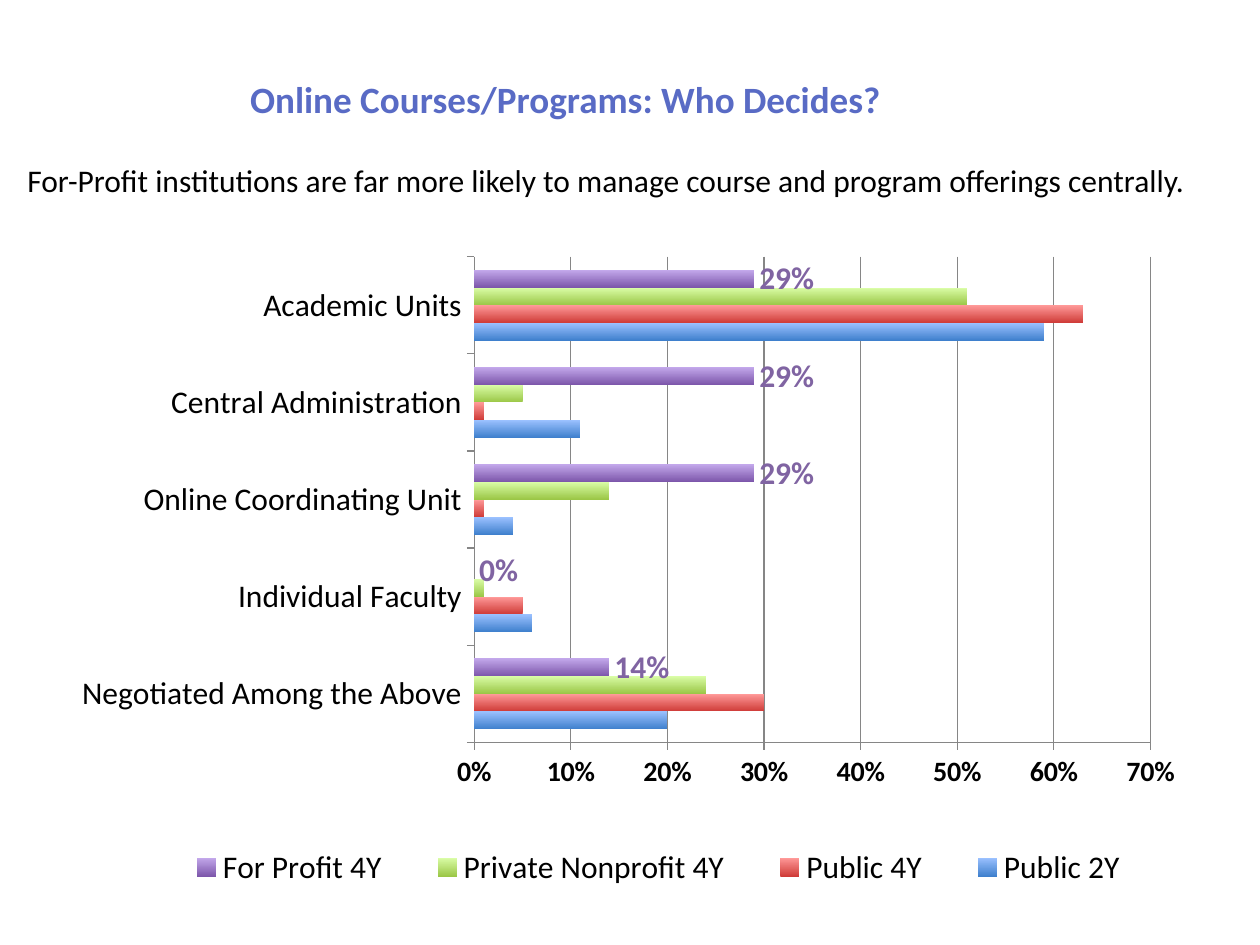
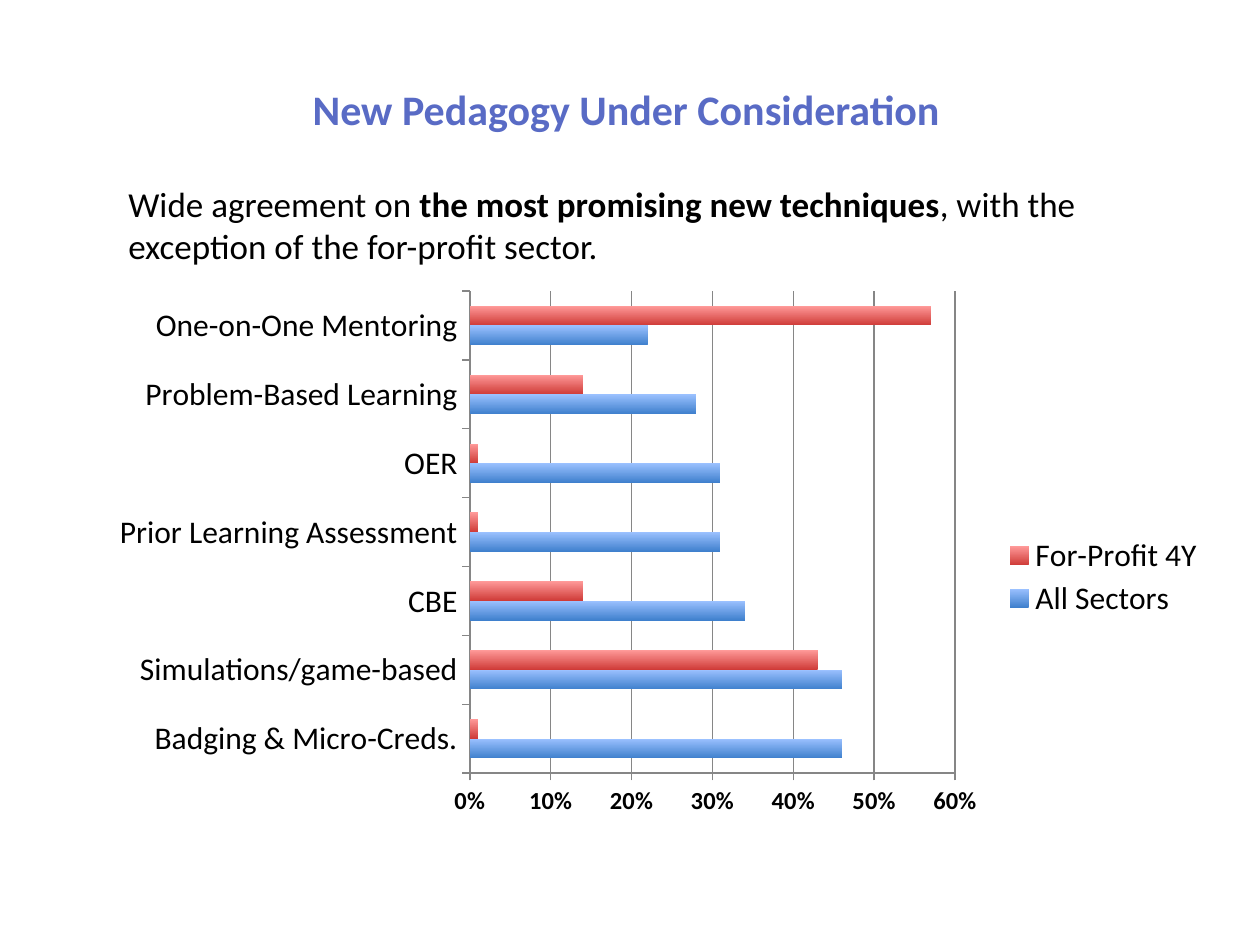
from lxml import etree
from pptx import Presentation
from pptx.chart.data import CategoryChartData
from pptx.dml.color import RGBColor
from pptx.enum.chart import XL_CHART_TYPE, XL_LABEL_POSITION, XL_LEGEND_POSITION, XL_TICK_MARK
from pptx.enum.text import MSO_ANCHOR, PP_ALIGN
from pptx.oxml.ns import qn
from pptx.util import Emu, Pt

BAR_CLUSTERED = XL_CHART_TYPE.BAR_CLUSTERED
LABEL_OUTSIDE = XL_LABEL_POSITION.OUTSIDE_END
LEGEND_RIGHT = XL_LEGEND_POSITION.RIGHT
TICK_OUTSIDE, TICK_NONE = XL_TICK_MARK.OUTSIDE, XL_TICK_MARK.NONE
MIDDLE, TOP = MSO_ANCHOR.MIDDLE, MSO_ANCHOR.TOP
CENTER, LEFT = PP_ALIGN.CENTER, PP_ALIGN.LEFT

SCALE = 914400 / 126
SLIDE_SIZE = (1260, 945)
FONT = "Calibri"
INSET = 13
COLORS = {"title": "596BC5", "text": "000000", "axis": "868686", "label": "8064A2"}
GRADIENTS = {
    "blue": ("3F80CD", "9BC1FF"),
    "red": ("CF3B38", "FF9A99"),
    "green": ("9BC747", "DAFDA7"),
    "purple": ("7D57AB", "C3A8EB"),
}

SLIDES = [
    {
        "title": {"text": "Online Courses/Programs: Who Decides?", "size": 21.2,
                  "box": (237, 58, 808, 82), "right_inset": 163},
        "message": {"runs": [("For-Profit institutions are far more likely to manage course "
                              "and program offerings centrally.", False)],
                    "size": 18, "box": (15, 155, 1208, 50)},
        "chart": {
            "box": (58, 223, 1166, 689),
            "plot": (0.357, 0.049, 0.58, 0.705),
            "legend": (0.08, 0.9, 0.87, 0.07),
            "maximum": 0.7,
            "axis_size": 16,
            "categories": ["Negotiated Among the Above", "Individual Faculty",
                           "Online Coordinating Unit", "Central Administration",
                           "Academic Units"],
            "series": [
                ("Public 2Y", "blue", (0.2, 0.06, 0.04, 0.11, 0.59)),
                ("Public 4Y", "red", (0.3, 0.05, 0.01, 0.01, 0.63)),
                ("Private Nonprofit 4Y", "green", (0.24, 0.01, 0.14, 0.05, 0.51)),
                ("For Profit 4Y", "purple", (0.14, 0, 0.29, 0.29, 0.29)),
            ],
            "labelled": "For Profit 4Y",
        },
    },
    {
        "title": {"text": "New Pedagogy Under Consideration", "size": 24,
                  "box": (202, 59, 849, 100), "right_inset": INSET},
        "message": {"runs": [("Wide agreement on ", False),
                             ("the most promising new techniques", True),
                             (", with the exception of the for-profit sector.", False)],
                    "size": 20, "box": (116, 176, 1023, 97)},
        "chart": {
            "box": (87, 275, 1123, 598),
            "plot": (0.341, 0.027, 0.432, 0.806),
            "legend": (0.81, 0.43, 0.19, 0.15),
            "maximum": 0.6,
            "axis_size": 14,
            "categories": ["Badging & Micro-Creds.", "Simulations/game-based", "CBE",
                           "Prior Learning Assessment", "OER", "Problem-Based Learning",
                           "One-on-One Mentoring"],
            "series": [
                ("All Sectors", "blue", (0.46, 0.46, 0.34, 0.31, 0.31, 0.28, 0.22)),
                ("For-Profit 4Y", "red", (0.01, 0.43, 0.14, 0.01, 0.01, 0.14, 0.57)),
            ],
            "labelled": None,
        },
    },
]


def px(length):
    return Emu(round(length * SCALE))


def color(name):
    return RGBColor.from_string(COLORS[name])


def style_font(font, size, color_name, bold):
    font.name = FONT
    font.size = Pt(size)
    font.bold = bold
    font.color.rgb = color(color_name)


def add_text(slide, box, runs, size, color_name, anchor, alignment, right_inset=INSET):
    text_frame = slide.shapes.add_textbox(*map(px, box)).text_frame
    text_frame.word_wrap = True
    text_frame.vertical_anchor = anchor
    text_frame.margin_right = px(right_inset)
    paragraph = text_frame.paragraphs[0]
    paragraph.alignment = alignment
    for text, bold in runs:
        run = paragraph.add_run()
        run.text = text
        style_font(run.font, size, color_name, bold)


def make_layout(bounds, inner=False):
    layout = etree.Element(qn("c:layout"))
    manual = etree.SubElement(layout, qn("c:manualLayout"))
    settings = [("layoutTarget", "inner")] if inner else []
    settings += [("xMode", "edge"), ("yMode", "edge")]
    settings += list(zip("xywh", map(str, bounds)))
    for tag, value in settings:
        etree.SubElement(manual, qn(f"c:{tag}")).set("val", value)
    return layout


def place_parts(chart, plot_bounds, legend_bounds):
    plot_area = chart._chartSpace.find(".//" + qn("c:plotArea"))
    legend = chart._chartSpace.find(".//" + qn("c:legend"))
    for part in (plot_area, legend):
        for layout in part.findall(qn("c:layout")):
            part.remove(layout)
    plot_area.insert(0, make_layout(plot_bounds, inner=True))
    legend.find(qn("c:legendPos")).addnext(make_layout(legend_bounds))


def style_axes(chart, maximum, size):
    value_axis = chart.value_axis
    value_axis.minimum_scale = 0
    value_axis.maximum_scale = maximum
    value_axis.major_unit = 0.1
    value_axis.has_major_gridlines = True
    value_axis.tick_labels.number_format = "0%"
    value_axis.tick_labels.number_format_is_linked = False
    style_font(value_axis.tick_labels.font, size, "text", True)
    for axis in (value_axis, chart.category_axis):
        axis.major_tick_mark = TICK_OUTSIDE
        axis.minor_tick_mark = TICK_NONE
    for line_format in (value_axis.format, chart.category_axis.format,
                        value_axis.major_gridlines.format):
        line_format.line.color.rgb = color("axis")
        line_format.line.width = Pt(0.75)


def style_series(series, gradient):
    fill = series.format.fill
    fill.gradient()
    fill.gradient_angle = 90
    for stop, shade in zip(fill.gradient_stops, GRADIENTS[gradient]):
        stop.color.rgb = RGBColor.from_string(shade)
    series.invert_if_negative = False


def label_series(series):
    labels = series.data_labels
    labels.show_value = True
    labels.number_format = "0%"
    labels.number_format_is_linked = False
    labels.position = LABEL_OUTSIDE
    style_font(labels.font, 18, "label", True)


def add_bar_chart(slide, content):
    chart_data = CategoryChartData(number_format="0%")
    chart_data.categories = content["categories"]
    for name, gradient, values in content["series"]:
        chart_data.add_series(name, values)
    chart = slide.shapes.add_chart(BAR_CLUSTERED, *map(px, content["box"]), chart_data).chart
    style_font(chart.font, 18, "text", False)
    chart.has_title = False
    chart.has_legend = True
    chart.legend.position = LEGEND_RIGHT
    chart.legend.include_in_layout = False
    plot = chart.plots[0]
    plot.gap_width = 150
    plot.vary_by_categories = False
    style_axes(chart, content["maximum"], content["axis_size"])
    for series, (name, gradient, values) in zip(plot.series, content["series"]):
        style_series(series, gradient)
        if name == content["labelled"]:
            label_series(series)
    place_parts(chart, content["plot"], content["legend"])


def main():
    presentation = Presentation()
    presentation.slide_width, presentation.slide_height = map(px, SLIDE_SIZE)
    for content in SLIDES:
        slide = presentation.slides.add_slide(presentation.slide_layouts[6])
        title, message = content["title"], content["message"]
        add_text(slide, title["box"], [(title["text"], True)], title["size"], "title",
                 MIDDLE, CENTER, title["right_inset"])
        add_bar_chart(slide, content["chart"])
        add_text(slide, message["box"], message["runs"], message["size"], "text", TOP, LEFT)
    presentation.save("out.pptx")


if __name__ == "__main__":
    main()
